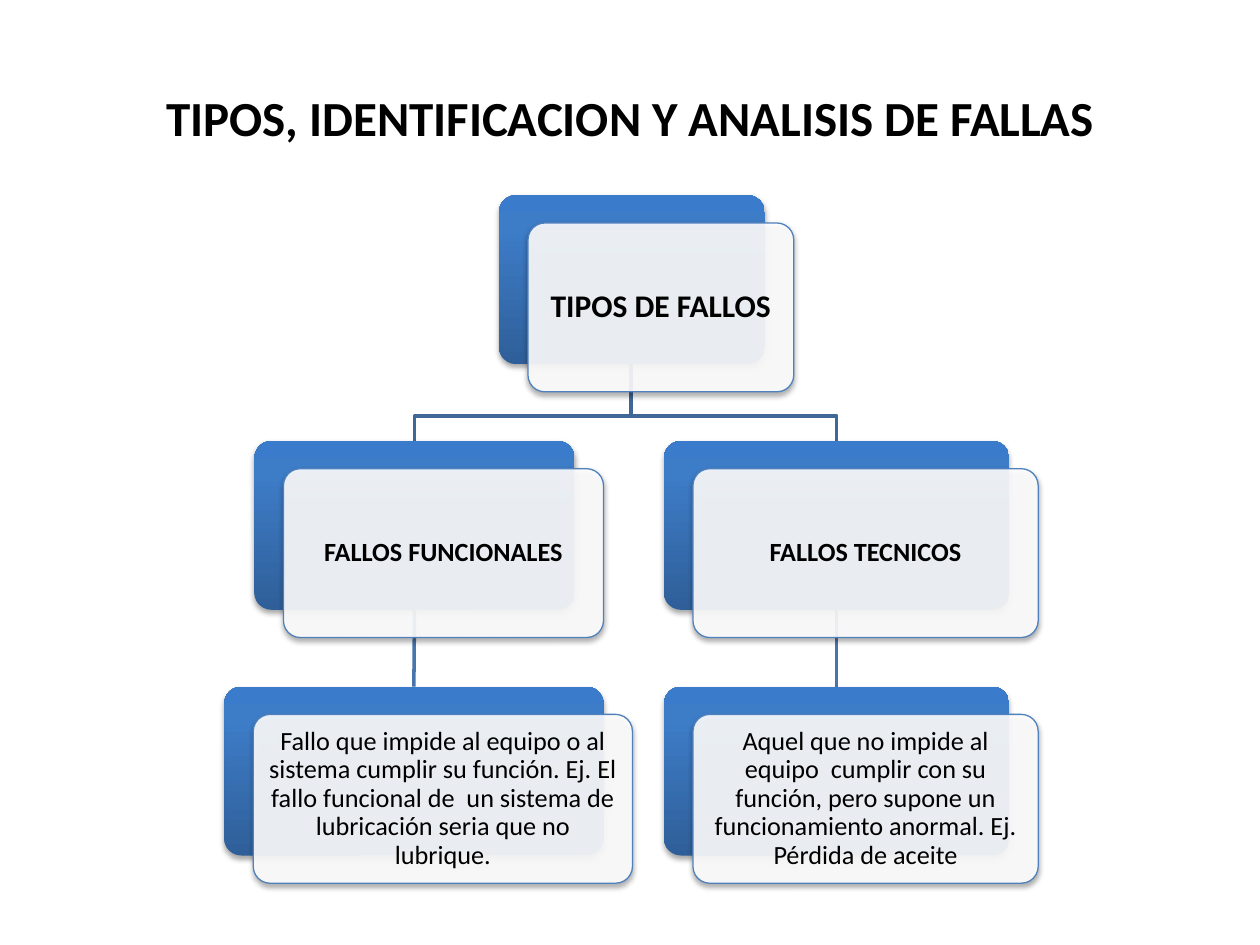
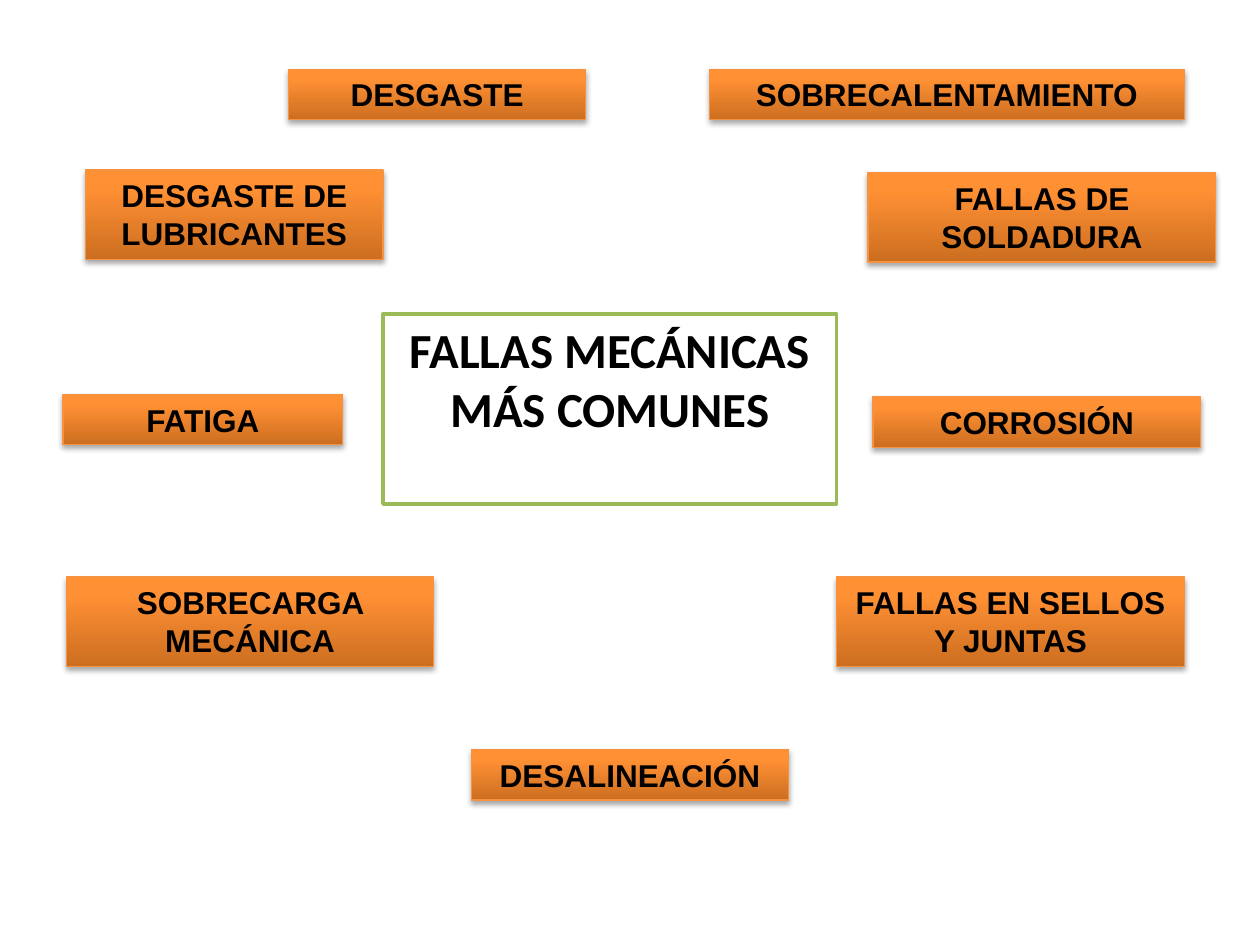
"""Build two slides on failure types and common mechanical failures."""
from dataclasses import dataclass

from lxml.etree import SubElement
from pptx import Presentation
from pptx.dml.color import RGBColor
from pptx.enum.shapes import MSO_CONNECTOR, MSO_SHAPE
from pptx.enum.text import MSO_ANCHOR, PP_ALIGN
from pptx.oxml.ns import qn
from pptx.util import Pt

RECT = MSO_SHAPE.RECTANGLE
ROUND = MSO_SHAPE.ROUNDED_RECTANGLE
LINE = MSO_CONNECTOR.STRAIGHT
CENTER = PP_ALIGN.CENTER
TOP = MSO_ANCHOR.TOP
MIDDLE = MSO_ANCHOR.MIDDLE

SCALE = 9144
BLACK, WHITE = "000000", "FFFFFF"
BLUE = ("2F5F99", "3D7CC7", "3A7CCB")
ORANGE = ("CC6E20", "FF9034", "FF9136")
STOPS = (0, 80000, 100000)
RIM, EDGE, GREEN = "4F81BD", "F69240", "9BBB59"
BRANCH, STEM = "3F6797", "4875AC"
CARD_H, CARD_TOP, STEP = 134, 155, 195
SHIFT_X, SHIFT_Y, BEND = 23, 22, 330


@dataclass
class Card:
    text: str
    left: int
    width: int
    level: int
    size: int = 15
    bold: bool = True
    inset: int = 6


@dataclass
class Label:
    text: str
    left: int
    top: int
    width: int
    height: int = 40


ROOT = Card("TIPOS DE FALLOS", 396, 211, 0, size=18, inset=7)
PAIRS = (
    (Card("FALLOS FUNCIONALES", 202, 254, 1),
     Card("Fallo que impide al equipo o al sistema cumplir su función. "
          "Ej. El fallo funcional de  un sistema de lubricación seria "
          "que no lubrique.", 178, 301, 2, bold=False)),
    (Card("FALLOS TECNICOS", 527, 274, 1),
     Card("Aquel que no impide al equipo  cumplir con su función, pero "
          "supone un funcionamiento anormal. Ej. Pérdida de aceite",
          527, 274, 2, bold=False)),
)
LABELS = (
    Label("DESGASTE", 229, 55, 236),
    Label("DESGASTE DE LUBRICANTES", 68, 135, 236, 71),
    Label("FATIGA", 50, 313, 222),
    Label("CORROSIÓN", 693, 315, 260),
    Label("DESALINEACIÓN", 374, 595, 252),
    Label("SOBRECARGA MECÁNICA", 53, 458, 291, 71),
    Label("SOBRECALENTAMIENTO", 563, 55, 377),
    Label("FALLAS DE SOLDADURA", 689, 137, 276, 71),
    Label("FALLAS EN SELLOS Y JUNTAS", 664, 458, 276, 71),
)


def px(value: int) -> int:
    return value * SCALE


def color(code: str) -> RGBColor:
    return RGBColor.from_string(code)


def write(shape, text: str, size: int, font="Calibri", bold=True,
          anchor=MIDDLE, inset=(10, 5), space=1.0) -> None:
    frame = shape.text_frame
    frame.word_wrap = True
    frame.vertical_anchor = anchor
    frame.margin_left = frame.margin_right = px(inset[0])
    frame.margin_top = frame.margin_bottom = px(inset[1])
    para = frame.paragraphs[0]
    para.alignment = CENTER
    para.line_spacing = space
    run = para.add_run()
    run.text = text
    run.font.name = font
    run.font.size = Pt(size)
    run.font.bold = bold
    run.font.color.rgb = color(BLACK)


def stroke(line, code: str, width: float) -> None:
    line.color.rgb = color(code)
    line.width = Pt(width)


def blend(shape, codes: tuple) -> None:
    shape.fill.gradient()
    shape.fill.gradient_angle = 90
    stops = shape.element.spPr.find(".//" + qn("a:gsLst"))
    for old in list(stops):
        stops.remove(old)
    for pos, code in zip(STOPS, codes):
        stop = SubElement(stops, qn("a:gs"), pos=str(pos))
        SubElement(stop, qn("a:srgbClr"), val=code)


def shade(shape) -> None:
    effects = shape.element.spPr.find(qn("a:effectLst"))
    shadow = SubElement(effects, qn("a:outerShdw"), blurRad="40000",
                        dist="23000", dir="5400000", rotWithShape="0")
    tint = SubElement(shadow, qn("a:srgbClr"), val=BLACK)
    SubElement(tint, qn("a:alpha"), val="35000")


def block(slide, kind, left: int, top: int, width: int, height: int,
          fill=WHITE, rim="", weight=0.75, shadow=True):
    shape = slide.shapes.add_shape(kind, px(left), px(top), px(width), px(height))
    shape.shadow.inherit = False
    if isinstance(fill, tuple):
        blend(shape, fill)
    else:
        shape.fill.solid()
        shape.fill.fore_color.rgb = color(fill)
    if rim:
        stroke(shape.line, rim, weight)
    else:
        shape.line.fill.background()
    if shadow:
        shade(shape)
    return shape


def draw_card(slide, card: Card):
    top = CARD_TOP + card.level * STEP
    back = block(slide, ROUND, card.left, top, card.width, CARD_H, BLUE)
    front = block(slide, ROUND, card.left + SHIFT_X, top + SHIFT_Y,
                  card.width, CARD_H, rim=RIM)
    back.adjustments[0] = front.adjustments[0] = 0.1
    tint = front.element.spPr.find(qn("a:solidFill"))[0]
    SubElement(tint, qn("a:alpha"), val="90000")
    write(front, card.text, card.size, bold=card.bold,
          inset=(card.inset, card.inset), space=0.9)
    return back


def send_back(slide, shape) -> None:
    slide.shapes.element.insert(2, shape.element)


def draw_stem(slide, upper, lower) -> None:
    line = slide.shapes.add_connector(LINE, 0, 0, 0, 0)
    line.begin_connect(upper, 2)
    line.end_connect(lower, 0)
    stroke(line.line, STEM, 2)
    SubElement(line.element.spPr, qn("a:effectLst"))
    send_back(slide, line)


def draw_branch(slide, card: Card) -> None:
    start = ROOT.left + ROOT.width // 2
    end = card.left + card.width // 2
    path = slide.shapes.build_freeform(start, CARD_TOP + CARD_H, SCALE)
    path.add_line_segments(
        [(start, BEND), (end, BEND), (end, CARD_TOP + STEP)], close=False)
    shape = path.convert_to_shape()
    shape.shadow.inherit = False
    shape.fill.background()
    stroke(shape.line, BRANCH, 2)
    send_back(slide, shape)


def draw_types(deck) -> None:
    slide = deck.slides.add_slide(deck.slide_layouts[5])
    title = slide.shapes.title
    title.left, title.top = px(50), px(30)
    title.width, title.height = px(900), px(125)
    write(title, "TIPOS, IDENTIFICACION Y ANALISIS DE FALLAS", 28)
    draw_card(slide, ROOT)
    for kind, detail in PAIRS:
        upper = draw_card(slide, kind)
        lower = draw_card(slide, detail)
        draw_stem(slide, upper, lower)
        draw_branch(slide, kind)


def draw_faults(deck) -> None:
    slide = deck.slides.add_slide(deck.slide_layouts[6])
    hub = block(slide, RECT, 304, 249, 360, 151, rim=GREEN, weight=2,
                shadow=False)
    write(hub, "FALLAS MECÁNICAS MÁS COMUNES", 28, anchor=TOP)
    for label in LABELS:
        shape = block(slide, RECT, label.left, label.top, label.width,
                      label.height, ORANGE, rim=EDGE)
        write(shape, label.text, 18, font="Arial", anchor=TOP)


def main() -> None:
    deck = Presentation()
    deck.slide_width, deck.slide_height = px(1000), px(750)
    draw_types(deck)
    draw_faults(deck)
    deck.save("out.pptx")


if __name__ == "__main__":
    main()
